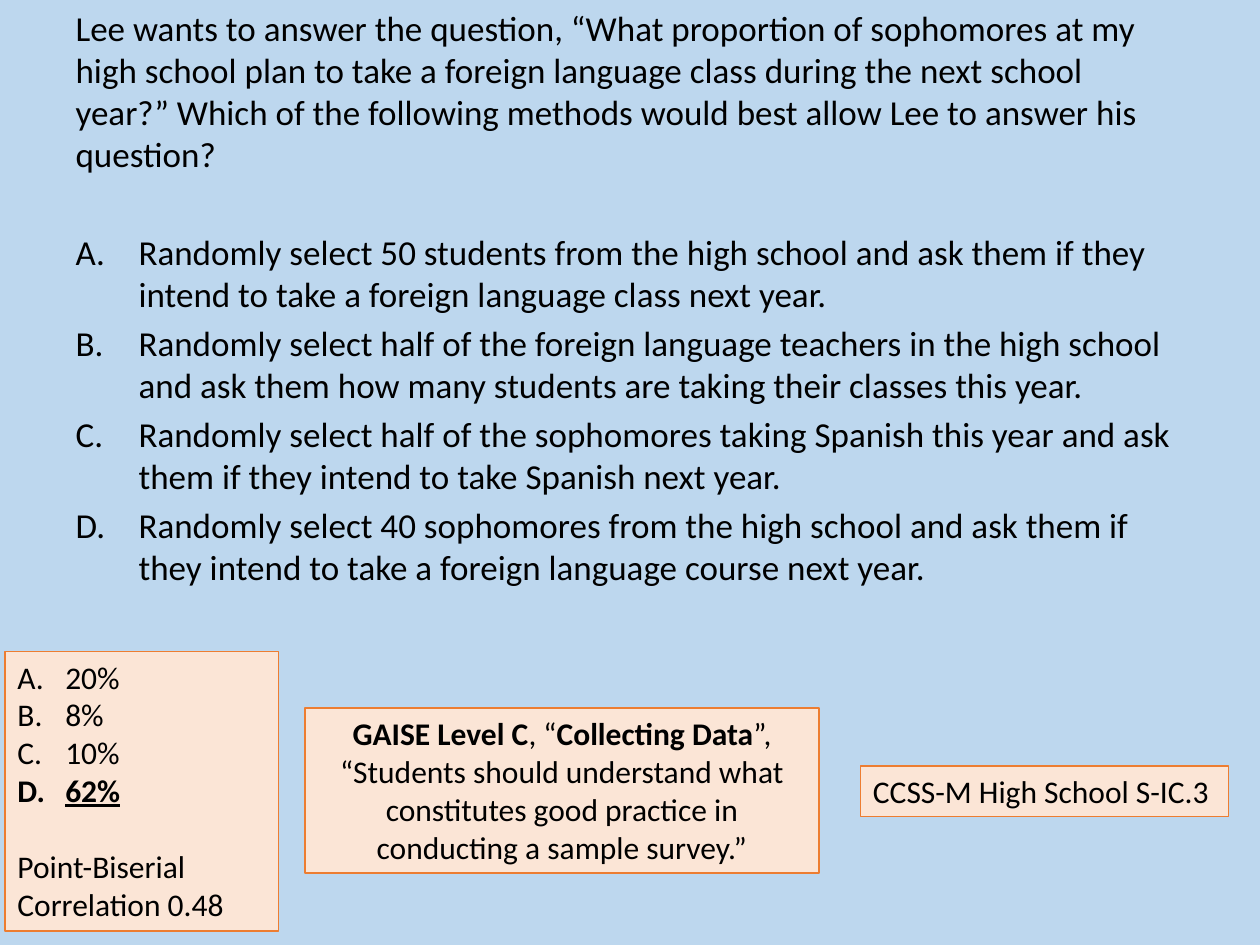
"""Builds a survey-sampling quiz slide with its answer statistics and standards."""
from lxml.etree import SubElement
from pptx import Presentation
from pptx.dml.color import RGBColor
from pptx.enum.shapes import MSO_SHAPE as Shape
from pptx.enum.text import MSO_ANCHOR as Anchor, MSO_AUTO_SIZE as AutoSize, PP_ALIGN as Align
from pptx.oxml.ns import qn
from pptx.util import Inches, Pt

BACKGROUND = RGBColor(0xBD, 0xD7, 0xEE)
BOX_FILL = RGBColor(0xFB, 0xE5, 0xD6)
BOX_LINE = RGBColor(0xED, 0x7D, 0x31)
BLACK = RGBColor(0, 0, 0)

QUESTION = (
    "Lee wants to answer the question, “What proportion of sophomores at my high school "
    "plan to take a foreign language class during the next school year?” Which of the "
    "following methods would best allow Lee to answer his question?"
)
ANSWERS = [
    "Randomly select 50 students from the high school and ask them if they intend to take "
    "a foreign language class next year.",
    "Randomly select half of the foreign language teachers in the high school and ask them "
    "how many students are taking their classes this year.",
    "Randomly select half of the sophomores taking Spanish this year and ask them if they "
    "intend to take Spanish next year.",
    "Randomly select 40 sophomores from the high school and ask them if they intend to take "
    "a foreign language course next year.",
]
PERCENTAGES = ["20%", "8%", "10%", "62%"]
STATISTIC = "Point-Biserial Correlation 0.48"
GUIDELINE = [
    ("GAISE Level C", True),
    (", “", False),
    ("Collecting Data", True),
    ("”, “Students should understand what constitutes good practice in conducting "
     "a sample survey.”", False),
]
STANDARD = "CCSS-M High School S-IC.3"


def add_paragraph(frame, runs, size, indent=0, before=0, align=Align.LEFT, underline=False):
    """Adds a paragraph of (text, bold) runs, lettered when it has an indent."""
    first = frame.paragraphs[0]
    paragraph = frame.add_paragraph() if first.runs else first
    paragraph.alignment = align
    paragraph.space_before = Pt(before)
    properties = paragraph._p.get_or_add_pPr()
    properties.set("marL", str(Inches(indent)))
    properties.set("indent", str(-Inches(indent)))
    if indent:
        SubElement(properties, qn("a:buFont"), typeface="+mj-lt")
        SubElement(properties, qn("a:buAutoNum"), type="alphaUcPeriod")
    else:
        SubElement(properties, qn("a:buNone"))
    for text, bold in runs:
        run = paragraph.add_run()
        run.text = text
        run.font.color.rgb = BLACK
        font_format = {"name": "Calibri", "size": Pt(size), "bold": bold, "underline": underline}
        for attribute, value in font_format.items():
            setattr(run.font, attribute, value)


def add_box(left, top, width, height):
    """Adds a bordered box and returns its text frame."""
    box = slide.shapes.add_shape(
        Shape.RECTANGLE, Inches(left), Inches(top), Inches(width), Inches(height))
    box.shadow.inherit = False
    box.fill.solid()
    box.fill.fore_color.rgb = BOX_FILL
    box.line.color.rgb = BOX_LINE
    box.line.width = Pt(0.75)
    frame_format = {"word_wrap": True, "auto_size": AutoSize.SHAPE_TO_FIT_TEXT,
                    "vertical_anchor": Anchor.TOP}
    for attribute, value in frame_format.items():
        setattr(box.text_frame, attribute, value)
    return box.text_frame


presentation = Presentation()
presentation.slide_width = Inches(10)
presentation.slide_height = Inches(7.5)
slide = presentation.slides.add_slide(presentation.slide_layouts[1])
slide.background.fill.solid()
slide.background.fill.fore_color.rgb = BACKGROUND

title = slide.shapes.title
title.element.getparent().remove(title.element)

body = slide.placeholders[1]
body_format = {"left": Inches(0.5), "top": Inches(0), "width": Inches(9), "height": Inches(4)}
for attribute, value in body_format.items():
    setattr(body, attribute, value)
body.text_frame.auto_size = AutoSize.NONE
add_paragraph(body.text_frame, [(QUESTION, False)], 20, before=4)
for index, answer in enumerate(ANSWERS):
    add_paragraph(body.text_frame, [(answer, False)], 20, indent=0.5, before=4 if index else 32)

guideline_frame = add_box(2.42, 5.62, 4.08, 1.31)
add_paragraph(guideline_frame, GUIDELINE, 18, align=Align.CENTER)

statistics_frame = add_box(0.04, 5.17, 2.17, 2.22)
for percentage in PERCENTAGES:
    correct = percentage == PERCENTAGES[-1]
    add_paragraph(statistics_frame, [(percentage, correct)], 18, indent=0.38, underline=correct)
add_paragraph(statistics_frame, [(STATISTIC, False)], 18, before=22)

standard_frame = add_box(6.83, 6.08, 2.92, 0.4)
add_paragraph(standard_frame, [(STANDARD, False)], 18)

presentation.save("out.pptx")
